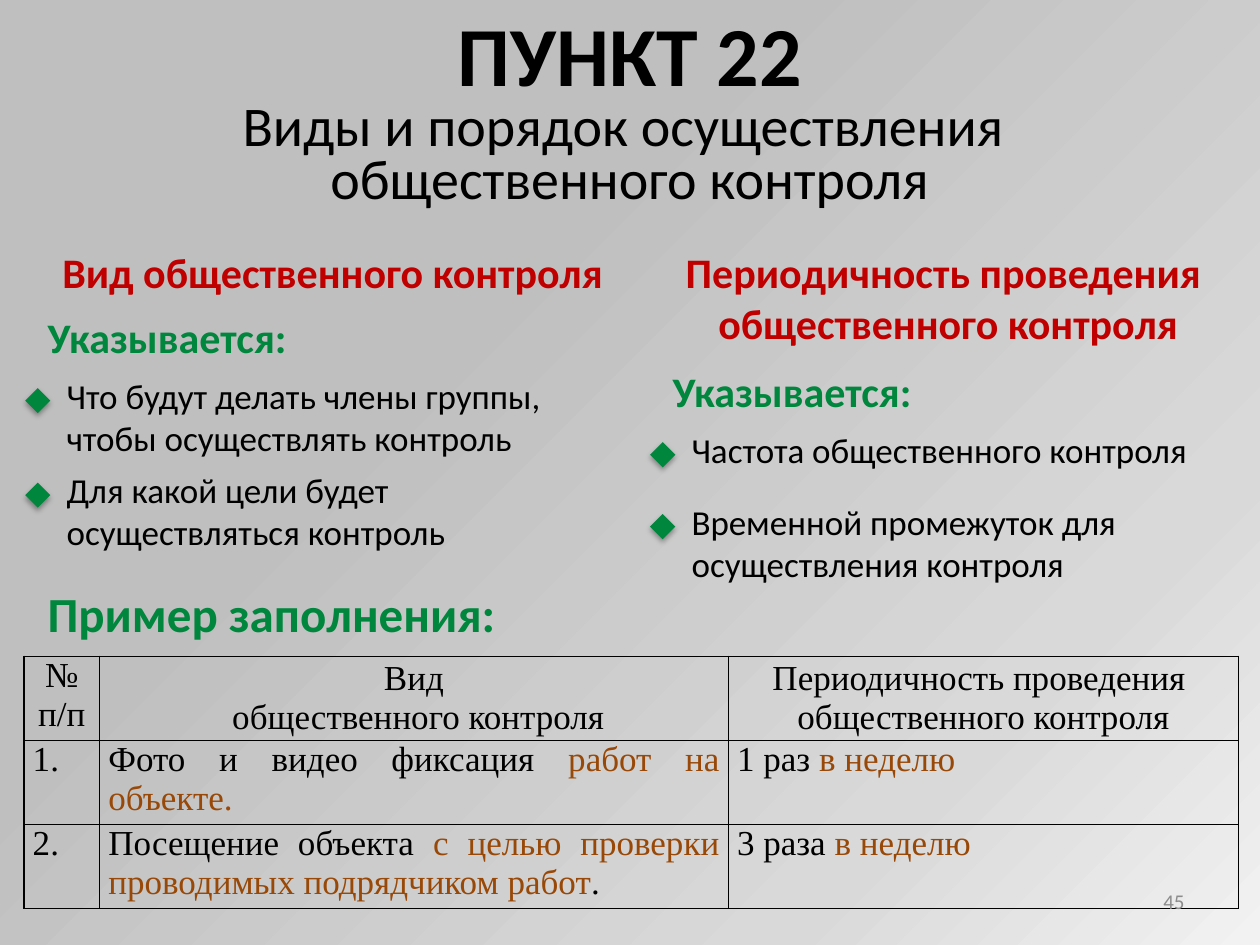
from lxml import etree
from pptx import Presentation
from pptx import util as u
from pptx.dml.color import RGBColor
from pptx.enum import shapes, text
from pptx.oxml import parse_xml
from pptx.oxml.ns import nsdecls, qn

BLACK = RGBColor(0x00, 0x00, 0x00)
GREEN = RGBColor(0x00, 0x86, 0x3D)
RED = RGBColor(0xC0, 0x00, 0x00)
BROWN = RGBColor(0x98, 0x48, 0x07)
GREY = RGBColor(0x8C, 0x8C, 0x8C)

LEFT, CENTER = text.PP_ALIGN.LEFT, text.PP_ALIGN.CENTER
RIGHT, JUSTIFY = text.PP_ALIGN.RIGHT, text.PP_ALIGN.JUSTIFY
TOP, MIDDLE = text.MSO_ANCHOR.TOP, text.MSO_ANCHOR.MIDDLE

WIDTH, HEIGHT = u.Inches(10), u.Inches(7.5)
COL, ROW = WIDTH / 100, HEIGHT / 75  # grid of 100 columns by 75 rows

TITLE = dict(size=u.Pt(48), bold=True)
SUBTITLE = dict(size=u.Pt(32))
HEADING = dict(size=u.Pt(24), bold=True)
BODY = dict(size=u.Pt(20))
EXAMPLE = dict(size=u.Pt(28), bold=True)
CELL = dict(size=u.Pt(20), name="Times New Roman")
NUMBER = dict(size=u.Pt(12))


def grid(left, top, width, height):
    return [round(v) for v in (left * COL, top * ROW, width * COL, height * ROW)]


def write(para, spans, style, align=LEFT):
    """Fill a paragraph with (words, colour) spans in one style."""
    para.alignment = align
    for words, color in spans:
        span = para.add_run()
        span.text = words
        for key, value in {"name": "Calibri", "bold": False, **style}.items():
            setattr(span.font, key, value)
        span.font.color.rgb = color


def add_text(page, place, lines, style, color=BLACK, align=LEFT, wrap=True):
    box = page.shapes.add_textbox(*grid(*place))
    frame = box.text_frame
    frame.word_wrap = wrap
    frame.auto_size = text.MSO_AUTO_SIZE.SHAPE_TO_FIT_TEXT
    for i, line in enumerate(lines):
        para = frame.add_paragraph() if i else frame.paragraphs[0]
        write(para, [(line, color)], style, align)
    return frame


def add_background(page):
    stops = ((0, "F2F2F2"), (22, "D9D9D9"), (65, "BFBFBF"))
    marks = "".join(f'<a:gs pos="{pos * 1000}"><a:srgbClr val="{color}"/></a:gs>'
                    for pos, color in stops)
    back = parse_xml(
        f'<p:bg {nsdecls("p", "a")}><p:bgPr><a:gradFill rotWithShape="1"><a:gsLst>{marks}</a:gsLst>'
        '<a:path path="circle"><a:fillToRect l="100000" t="100000"/></a:path>'
        '<a:tileRect r="-100000" b="-100000"/></a:gradFill><a:effectLst/></p:bgPr></p:bg>')
    page.element.cSld.insert(0, back)


def add_title(page, place):
    lines = ["Виды и порядок осуществления ", "общественного контроля"]
    frame = add_text(page, place, ["ПУНКТ 22"], TITLE, align=CENTER)
    for line in lines:
        para = frame.add_paragraph()
        para.line_spacing = 0.8
        write(para, [(line, BLACK)], SUBTITLE, CENTER)


def add_bullet(page, left, top, height, words):
    add_text(page, (left + 2.3, top, 44.1, height), [words], BODY)
    diamond = page.shapes.add_shape(shapes.MSO_SHAPE.DIAMOND, *grid(left, top + 1.6, 2, 2))
    diamond.fill.solid()
    diamond.fill.fore_color.rgb = GREEN
    diamond.line.fill.background()
    diamond.shadow.inherit = False
    effects = diamond.element.spPr.find(qn("a:effectLst"))
    effects.append(parse_xml(
        f'<a:outerShdw {nsdecls("a")} blurRad="{u.Pt(3.1)}" dist="{u.Pt(1.8)}" dir="5400000" '
        'rotWithShape="0"><a:srgbClr val="000000"><a:alpha val="35000"/></a:srgbClr></a:outerShdw>'))


def add_column(page, left, heading_place, heading, label_top, bullets):
    add_text(page, heading_place, heading, HEADING, RED, CENTER)
    add_text(page, (left + 0.8, label_top, 22, 5), ["Указывается:"], HEADING, GREEN, wrap=False)
    for top, height, words in bullets:
        add_bullet(page, left, top, height, words)


def add_borders(cell):
    props = cell._tc.get_or_add_tcPr()
    for i, side in enumerate(("lnL", "lnR", "lnT", "lnB")):
        line = etree.Element(qn(f"a:{side}"), w=str(u.Pt(1)))
        fill = etree.SubElement(line, qn("a:solidFill"))
        etree.SubElement(fill, qn("a:srgbClr"), val=str(BLACK))
        props.insert(i, line)


def fill_cell(cell, paras, align, anchor):
    cell.fill.background()
    margins = dict(margin_left=0.07, margin_right=0.07, margin_top=0, margin_bottom=0)
    for key, value in margins.items():
        setattr(cell, key, u.Inches(value))
    cell.vertical_anchor = anchor
    for i, spans in enumerate(paras):
        para = cell.text_frame.add_paragraph() if i else cell.text_frame.paragraphs[0]
        write(para, spans, CELL, align)
    add_borders(cell)


def add_example(page, place):
    header = [["№ п/п"], ["Вид", " общественного контроля"],
              ["Периодичность проведения ", "общественного контроля"]]
    entries = [
        [[("1.", BLACK)],
         [("Фото и видео фиксация ", BLACK), ("работ на объекте.", BROWN)],
         [("1 раз ", BLACK), ("в неделю", BROWN)]],
        [[("2.", BLACK)],
         [("Посещение объекта ", BLACK),
          ("с целью проверки проводимых подрядчиком работ", BROWN), (".", BLACK)],
         [("3 раза ", BLACK), ("в неделю", BROWN)]],
    ]
    table = page.shapes.add_table(3, 3, *grid(*place)).table
    table.first_row = table.horz_banding = False
    for column, width in zip(table.columns, (6, 49.9, 40.5)):
        column.width = round(width * COL)
    for c, lines in enumerate(header):
        paras = [[(line, BLACK)] for line in lines]
        fill_cell(table.cell(0, c), paras, CENTER, MIDDLE if c else TOP)
    for r, entry in enumerate(entries, 1):
        for c, spans in enumerate(entry):
            fill_cell(table.cell(r, c), [spans], JUSTIFY, TOP)


def add_page_number(page, place):
    frame = add_text(page, place, ["45"], NUMBER, GREY, RIGHT)
    frame.auto_size = text.MSO_AUTO_SIZE.NONE
    frame.vertical_anchor = MIDDLE


def main():
    deck = Presentation()
    deck.slide_width, deck.slide_height = WIDTH, HEIGHT
    page = deck.slides.add_slide(deck.slide_layouts[6])
    add_background(page)
    add_title(page, (0, -0.3, 100, 17.7))

    # Two columns of requirements
    add_column(page, 2, (2.8, 19.1, 47.2, 5), ["Вид общественного контроля"], 24.2, [
        (29.2, 7.7, "Что будут делать члены группы, чтобы осуществлять контроль"),
        (36.7, 7.7, "Для какой цели будет осуществляться контроль")])
    add_column(page, 51.6, (52.8, 19.1, 44.9, 9.1),
               ["Периодичность проведения ", "общественного контроля"], 28.5, [
                   (33.5, 4.4, "Частота общественного контроля"),
                   (39.2, 7.7, "Временной промежуток для осуществления контроля")])

    # Worked example
    add_text(page, (2.8, 45.8, 43.3, 5.7), ["Пример заполнения:"], EXAMPLE, GREEN)
    add_example(page, (1.9, 52.1, 96.4, 20))
    add_page_number(page, (71.7, 69.5, 23.3, 4))
    deck.save("out.pptx")


if __name__ == "__main__":
    main()
